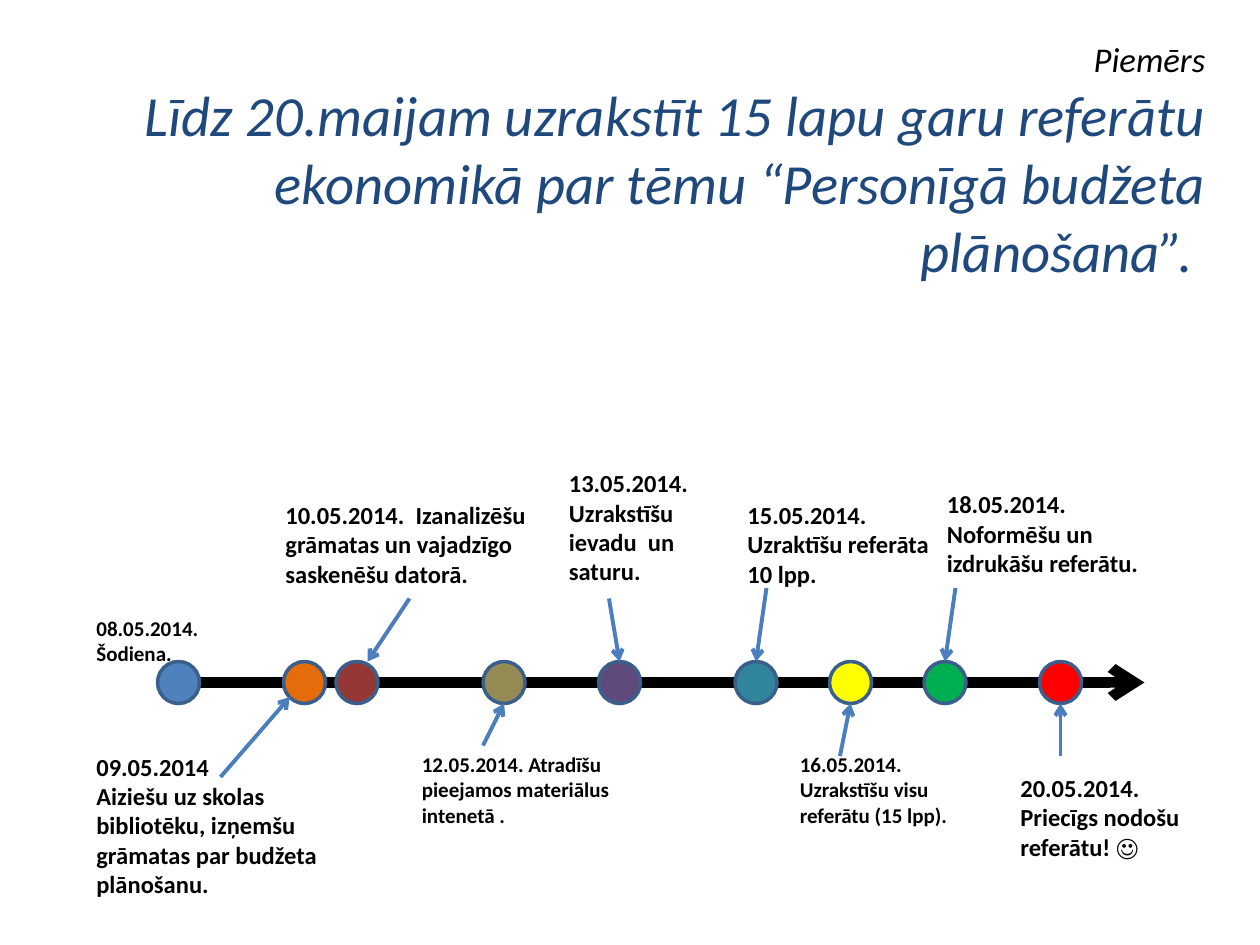
import pptx
import pptx.util
import pptx.dml.color
import pptx.enum.shapes
import pptx.enum.text
import pptx.oxml
import pptx.oxml.ns

RGB = pptx.dml.color.RGBColor
BLACK = RGB(0x00, 0x00, 0x00)
NAVY = RGB(0x1F, 0x49, 0x7D)
EDGE = RGB(0x3A, 0x5F, 0x8C)
ARROW = RGB(0x4B, 0x7E, 0xBC)
BLUE = RGB(0x4F, 0x81, 0xBD)
ORANGE = RGB(0xE4, 0x6C, 0x0A)
BROWN = RGB(0x95, 0x37, 0x35)
OLIVE = RGB(0x94, 0x8A, 0x54)
PURPLE = RGB(0x60, 0x4A, 0x7B)
TEAL = RGB(0x31, 0x85, 0x9C)
YELLOW = RGB(0xFF, 0xFF, 0x00)
GREEN = RGB(0x00, 0xB0, 0x50)
RED = RGB(0xFF, 0x00, 0x00)

# Title lines: text, size, colour
TITLE = [
    ("Piemērs", 19.8, BLACK),
    ("Līdz 20.maijam uzrakstīt 15 lapu garu referātu ekonomikā par tēmu "
     "“Personīgā budžeta plānošana”. ", 32.4, NAVY),
]

# Steps: dot left, dot colour, label box, text size, label lines, arrow (from, to)
STEPS = [
    (150, BLUE, (80, 580, 160, 60), 12, ["08.05.2014. Šodiena."], None),
    (270, ORANGE, (80, 710, 250, 154), 14,
     ["09.05.2014", "Aiziešu uz skolas bibliotēku, izņemšu grāmatas par budžeta plānošanu."],
     ((210, 740), (276, 664))),
    (320, BROWN, (260, 470, 280, 97), 14,
     ["10.05.2014.  Izanalizēšu grāmatas un vajadzīgo saskenēšu datorā."],
     ((390, 570), (350, 630))),
    (460, OLIVE, (390, 710, 250, 85), 12,
     ["12.05.2014. Atradīšu pieejamos materiālus intenetā ."],
     ((460, 710), (480, 670))),
    (570, PURPLE, (530, 440, 190, 125), 14,
     ["13.05.2014. Uzrakstīšu ievadu  un saturu."],
     ((580, 570), (590, 630))),
    (700, TEAL, (700, 470, 210, 97), 14,
     ["15.05.2014. Uzraktīšu referāta 10 lpp."],
     ((730, 560), (720, 630))),
    (790, YELLOW, (750, 710, 170, 85), 12,
     ["16.05.2014. Uzrakstīšu visu referātu (15 lpp)."],
     ((800, 720), (810, 670))),
    (880, GREEN, (890, 460, 210, 97), 14,
     ["18.05.2014. Noformēšu un izdrukāšu referātu."],
     ((910, 560), (900, 630))),
    (990, RED, (960, 730, 180, 97), 14,
     ["20.05.2014. Priecīgs nodošu referātu! ☺"],
     ((1010, 720), (1010, 670))),
]
DOT = 40
AXIS = 650
SCALE = 7620  # 120 px to the inch


def px(*vals):
    return [pptx.util.Emu(v * SCALE) for v in vals]


def style(font, size, color, **form):
    form.update(name="Calibri", size=pptx.util.Pt(size))
    for key, val in form.items():
        setattr(font, key, val)
    font.color.rgb = color


def write(frame, lines, align, **form):
    for i, (text, size, color) in enumerate(lines):
        para = frame.paragraphs[0] if i == 0 else frame.add_paragraph()
        para.alignment = align
        run = para.add_run()
        run.text = text
        style(run.font, size, color, **form)


def arrow(shapes, start, end, color, width):
    line = shapes.add_connector(
        pptx.enum.shapes.MSO_CONNECTOR.STRAIGHT, *px(*start, *end))
    line.line.color.rgb = color
    line.line.width = pptx.util.Pt(width)
    qn = pptx.oxml.ns.qn
    tail = line.line._get_or_add_ln().makeelement(qn("a:tailEnd"), {"type": "arrow"})
    line.line._get_or_add_ln().append(tail)
    prop = line._element.spPr
    prop.append(prop.makeelement(qn("a:effectLst"), {}))


def dot(shapes, left, color):
    mark = shapes.add_shape(
        pptx.enum.shapes.MSO_SHAPE.OVAL, *px(left, AXIS - DOT // 2, DOT, DOT))
    mark.shadow.inherit = False
    mark.fill.solid()
    mark.fill.fore_color.rgb = color
    mark.line.color.rgb = EDGE
    mark.line.width = pptx.util.Pt(2)


def label(shapes, box, size, lines):
    frame = shapes.add_textbox(*px(*box)).text_frame
    frame.word_wrap = True
    frame.auto_size = pptx.enum.text.MSO_AUTO_SIZE.SHAPE_TO_FIT_TEXT
    write(frame, [(text, size, BLACK) for text in lines],
          pptx.enum.text.PP_ALIGN.LEFT, bold=True)


def main():
    deck = pptx.Presentation()
    deck.slide_width, deck.slide_height = px(1200, 900)
    slide = deck.slides.add_slide(deck.slide_layouts[5])
    shapes = slide.shapes

    # Title, lifted above the box centre by its bottom inset
    title = shapes.title
    title.left, title.top, title.width, title.height = px(60, 110, 1100, 150)
    frame = title.text_frame
    frame.auto_size = pptx.enum.text.MSO_AUTO_SIZE.NONE
    frame.vertical_anchor = pptx.enum.text.MSO_ANCHOR.MIDDLE
    frame.margin_bottom = px(70)[0]
    write(frame, TITLE, pptx.enum.text.PP_ALIGN.RIGHT, italic=True)

    # Time axis
    arrow(shapes, (150, AXIS), (1090, AXIS), BLACK, 6)

    # Steps along the axis
    for left, color, box, size, lines, link in STEPS:
        dot(shapes, left, color)
        label(shapes, box, size, lines)
        if link:
            arrow(shapes, *link, ARROW, 2.25)

    deck.save("out.pptx")


if __name__ == "__main__":
    main()
